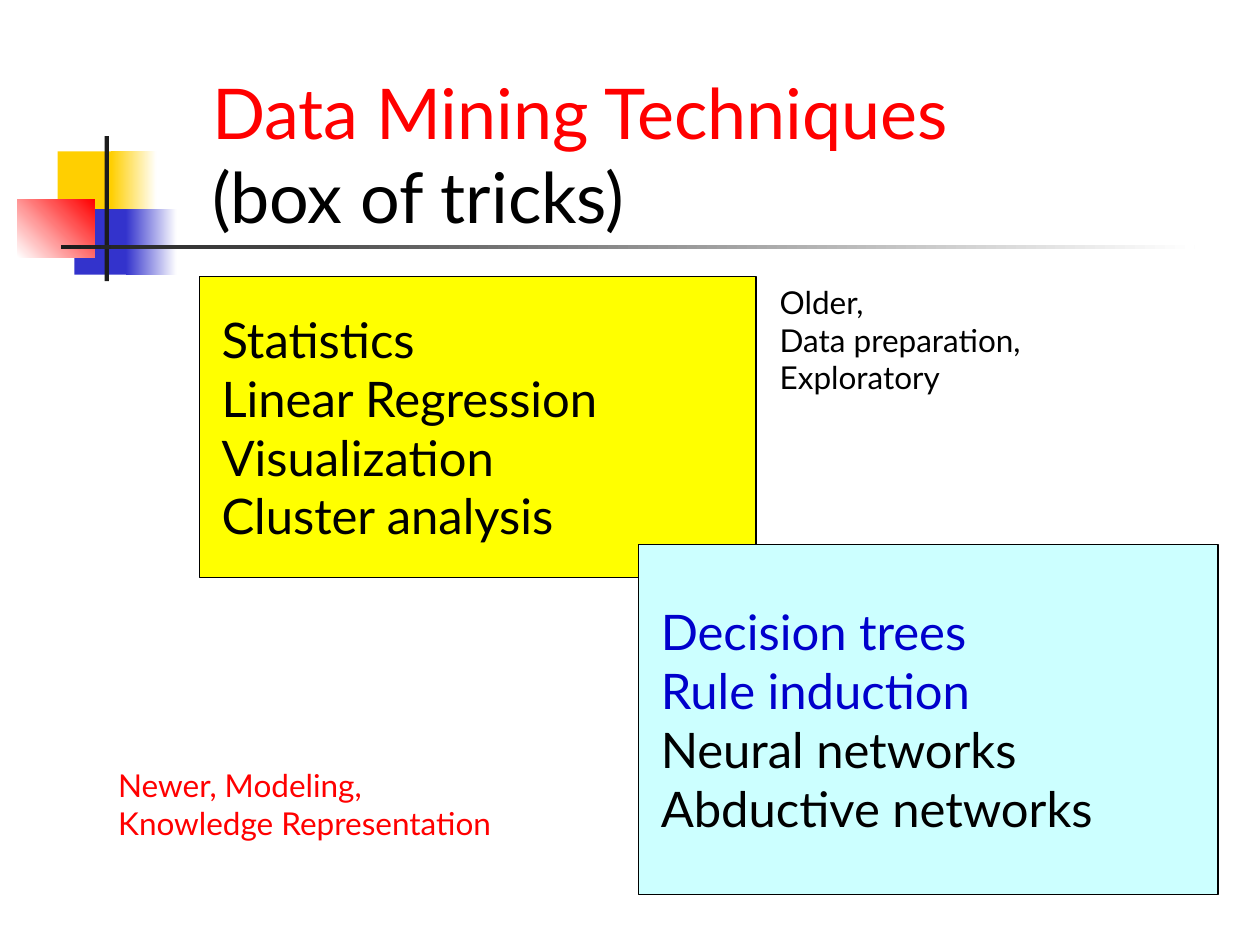
"""Build the data mining techniques slide with its two overlapping method boxes."""
from dataclasses import dataclass

from lxml.etree import SubElement
from pptx import Presentation
from pptx.dml.color import RGBColor as RGB
from pptx.enum.shapes import MSO_SHAPE as Preset
from pptx.enum.text import MSO_ANCHOR as Anchor, MSO_AUTO_SIZE as AutoSize, PP_ALIGN as Align
from pptx.oxml.ns import qn
from pptx.util import Pt


@dataclass(frozen=True)
class Theme:
    font: str = "Lato"
    title_size: int = 40
    list_size: int = 28
    note_size: int = 18
    black: str = "000000"
    white: str = "FFFFFF"
    red: str = "FF0000"
    ink: str = "1C1C1C"
    gold: str = "FFCF01"
    indigo: str = "3333CC"
    blue: str = "0000CC"
    yellow: str = "FFFF00"
    aqua: str = "CCFFFF"


theme = Theme()


def place(part, left, top, width, height):
    part.left, part.top, part.width, part.height = Pt(left), Pt(top), Pt(width), Pt(height)


def write(part, lines, size, anchor=Anchor.TOP, inset=7.2):
    frame = part.text_frame
    frame.text = "\n".join(line for line, _ in lines)
    frame.auto_size = AutoSize.NONE
    frame.word_wrap = True
    frame.vertical_anchor = anchor
    frame.margin_left = Pt(inset)
    for paragraph, (_, color) in zip(frame.paragraphs, lines):
        paragraph.alignment = Align.LEFT
        paragraph.space_before = Pt(0)
        font = paragraph.runs[0].font
        font.name, font.size = theme.font, Pt(size)
        font.color.rgb = RGB.from_string(color)


deck = Presentation()
deck.slide_width, deck.slide_height = Pt(720), Pt(540)
slide = deck.slides.add_slide(deck.slide_layouts[3])

ornaments = [
    (33, 86.5, 35, 37.5, theme.gold, None, 0),
    (63.5, 86.5, 26, 37.5, theme.gold, theme.white, 0),
    (42.5, 119.5, 33, 37.5, theme.indigo, None, 0),
    (72, 119.5, 29, 37.5, theme.indigo, theme.white, 0),
    (10, 113.75, 44, 33.25, theme.white, theme.red, 45),
    (59.75, 77.75, 2.5, 83, theme.ink, None, 0),
    (34.75, 140, 648, 2.5, theme.ink, theme.white, 0),
]
for left, top, width, height, start, end, angle in ornaments:
    ornament = slide.shapes.add_shape(Preset.RECTANGLE, Pt(left), Pt(top), Pt(width), Pt(height))
    ornament.shadow.inherit = False
    ornament.line.fill.background()
    if end:
        ornament.fill.gradient()
        ornament.fill.gradient_angle = angle
        for stop, color in zip(ornament.fill.gradient_stops, (start, end)):
            stop.color.rgb = RGB.from_string(color)
    else:
        ornament.fill.solid()
        ornament.fill.fore_color.rgb = RGB.from_string(start)

title = slide.shapes.title
place(title, 114, 36, 438, 103)
write(title, [("Data Mining Techniques", theme.red), ("(box of tricks)", theme.black)], theme.title_size)

older_methods = [
    ("Statistics", theme.black),
    ("Linear Regression", theme.black),
    ("Visualization", theme.black),
    ("Cluster analysis", theme.black),
]
newer_methods = [
    ("Decision trees", theme.blue),
    ("Rule induction", theme.blue),
    ("Neural networks", theme.black),
    ("Abductive networks", theme.black),
]
method_boxes = [
    (1, (114, 158, 318, 172), theme.yellow, older_methods),
    (2, (365, 311, 331, 200), theme.aqua, newer_methods),
]
for index, bounds, fill, methods in method_boxes:
    method_box = slide.placeholders[index]
    place(method_box, *bounds)
    method_box.fill.solid()
    method_box.fill.fore_color.rgb = RGB.from_string(fill)
    method_box.line.color.rgb = RGB.from_string(theme.black)
    method_box.line.width = Pt(0.75)
    write(method_box, methods, theme.list_size, Anchor.MIDDLE, 12.6)
    for paragraph in method_box.text_frame.paragraphs:
        properties = paragraph._p.get_or_add_pPr()
        properties.set("marL", "0")
        properties.set("indent", "0")
        SubElement(properties, qn("a:buNone"))

notes = [
    ((438.5, 158, 200, 96), theme.black, ["Older,", "Data preparation,", "Exploratory"]),
    ((60.5, 434, 297, 65), theme.red, ["Newer, Modeling,", "Knowledge Representation"]),
]
for bounds, color, lines in notes:
    note = slide.shapes.add_textbox(*map(Pt, bounds))
    write(note, [(line, color) for line in lines], theme.note_size)

deck.save("out.pptx")
